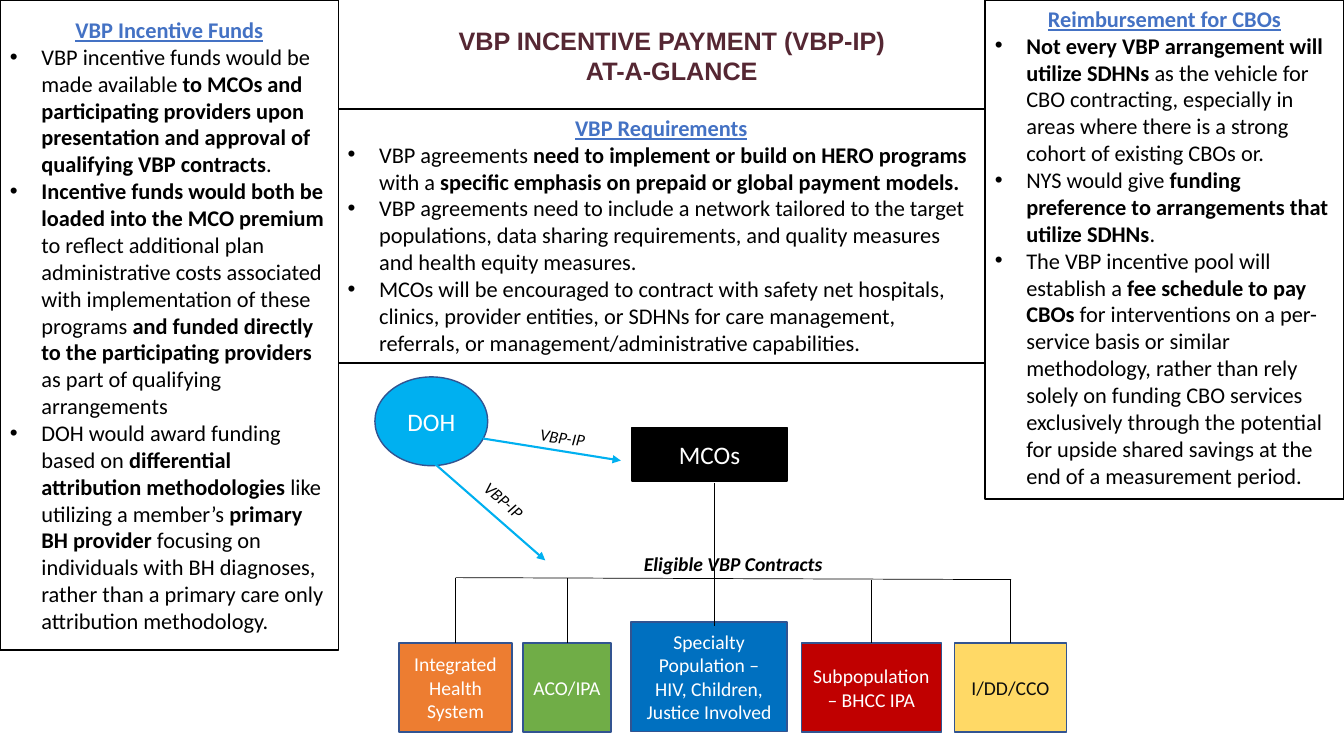
from dataclasses import dataclass
from typing import Optional

from lxml import etree
from pptx import Presentation
from pptx.dml.color import RGBColor
from pptx.enum.shapes import MSO_CONNECTOR, MSO_SHAPE
from pptx.enum.text import MSO_ANCHOR, MSO_AUTO_SIZE, PP_ALIGN
from pptx.oxml.ns import qn
from pptx.util import Pt

RECTANGLE = MSO_SHAPE.RECTANGLE
OVAL = MSO_SHAPE.OVAL
STRAIGHT = MSO_CONNECTOR.STRAIGHT
TOP, MIDDLE = MSO_ANCHOR.TOP, MSO_ANCHOR.MIDDLE
CENTER = PP_ALIGN.CENTER
NO_AUTOFIT = MSO_AUTO_SIZE.NONE
TOP_SIDE = 0


@dataclass(frozen=True)
class Theme:
    title_font: str = "Arial"
    body_font: str = "Calibri"
    title: str = "552733"
    heading: str = "4472C4"
    black: str = "000000"
    white: str = "FFFFFF"
    outline: str = "325491"
    flow: str = "00B0F0"
    large_size: float = 18
    panel_size: float = 16
    box_size: float = 14
    label_size: float = 12
    bullet_indent: float = 22.5


THEME = Theme()


@dataclass(frozen=True)
class Area:
    left: float
    top: float
    width: float
    height: float


@dataclass(frozen=True)
class Panel:
    area: Area
    heading: str
    bullets: tuple[str, ...]
    anchor: MSO_ANCHOR = TOP


@dataclass(frozen=True)
class Node:
    text: str
    area: Area
    fill: str
    size: float = THEME.box_size
    color: str = THEME.white
    outline: str = THEME.outline
    kind: MSO_SHAPE = RECTANGLE
    branch_top: Optional[float] = None


@dataclass(frozen=True)
class Line:
    begin: tuple[float, float]
    end: tuple[float, float]
    color: str = THEME.black
    width: float = 0.5
    arrow: bool = False


@dataclass(frozen=True)
class Label:
    text: str
    area: Area
    size: float = THEME.label_size
    bold: bool = False
    rotation: float = 0


PANELS = (
    Panel(Area(241.2, 77.8, 462.3, 181.4), "VBP Requirements", (
        "VBP agreements *need to implement or build on HERO programs* with a "
        "*specific emphasis on prepaid or global payment models.*",
        "VBP agreements need to include a network tailored to the target populations, "
        "data sharing requirements, and quality measures and health equity measures.",
        "MCOs will be encouraged to contract with safety net hospitals, clinics, provider "
        "entities, or SDHNs for care management, referrals, or management/administrative "
        "capabilities.",
    )),
    Panel(Area(0, 0, 242, 464.4), "VBP Incentive Funds", (
        "VBP incentive funds would be made available *to MCOs and participating providers "
        "upon presentation and approval of qualifying VBP contracts*.",
        "*Incentive funds would both be loaded into the MCO premium *to reflect additional "
        "plan administrative costs associated with implementation of these programs *and "
        "funded directly to the participating providers* as part of qualifying arrangements",
        "DOH would award funding based on *differential attribution methodologies *like "
        "utilizing a member’s *primary BH provider *focusing on individuals with BH "
        "diagnoses, rather than a primary care only attribution methodology.",
    ), MIDDLE),
    Panel(Area(703.5, 0, 256.5, 356.4), "Reimbursement for CBOs", (
        "*Not every VBP arrangement will utilize SDHNs *as the vehicle for CBO contracting, "
        "especially in areas where there is a strong cohort of existing CBOs or.",
        "NYS would give *funding preference to arrangements that utilize SDHNs*.",
        "The VBP incentive pool will establish a *fee schedule to pay CBOs* for interventions "
        "on a per-service basis or similar methodology, rather than rely solely on funding "
        "CBO services exclusively through the potential for upside shared savings at the end "
        "of a measurement period.",
    )),
)

NODES = (
    Node("DOH", Area(267.8, 269.2, 80.6, 63.4), THEME.flow, THEME.large_size, kind=OVAL),
    Node("MCOs", Area(451.4, 305.3, 110.9, 38.2), THEME.black, THEME.large_size,
         outline=THEME.black),
    Node("Integrated Health System", Area(285.1, 459.4, 80.6, 63.4), "ED7D31",
         branch_top=413),
    Node("ACO/IPA", Area(373.7, 459.4, 62.7, 63.4), "70AD47", branch_top=413),
    Node("Specialty Population – HIV, Children, Justice Involved",
         Area(450.7, 444.2, 111.6, 78.5), "0070C0"),
    Node("Subpopulation – BHCC IPA", Area(572.4, 459.4, 100, 63.4), "C00000",
         branch_top=414),
    Node("I/DD/CCO", Area(681.8, 459.4, 80, 63.4), "FFD966", color="0D0D0D",
         branch_top=413.5),
)

LINES = (
    Line((344.9, 313.2), (443.5, 329), THEME.flow, 1.5, True),
    Line((308.9, 329.8), (389.5, 400.3), THEME.flow, 1.5, True),
    Line((325.4, 412.6), (722.2, 414)),
    Line((510.5, 344.9), (510.5, 416.2)),
    Line((510.5, 412.6), (510.5, 447.1)),
)

LABELS = (
    Label("Eligible VBP Contracts", Area(325.4, 391, 396.7, 24.5), THEME.box_size, True),
    Label("VBP-IP", Area(355.7, 301.7, 92.2, 21.6), rotation=8.3),
    Label("VBP-IP", Area(313.9, 346.3, 92.2, 21.6), rotation=41.2),
)


def place(area: Area) -> tuple:
    return Pt(area.left), Pt(area.top), Pt(area.width), Pt(area.height)


def style_font(font, size: float, color: str, bold: bool = False,
               name: str = THEME.body_font) -> None:
    font.name = name
    font.size = Pt(size)
    font.bold = bold
    font.color.rgb = RGBColor.from_string(color)


def add_box(slide, kind: MSO_SHAPE, area: Area, fill: str, outline: str, anchor: MSO_ANCHOR):
    shape = slide.shapes.add_shape(kind, *place(area))
    shape.shadow.inherit = False
    shape.fill.solid()
    shape.fill.fore_color.rgb = RGBColor.from_string(fill)
    shape.line.color.rgb = RGBColor.from_string(outline)
    shape.line.width = Pt(1)
    shape.text_frame.word_wrap = True
    shape.text_frame.vertical_anchor = anchor
    return shape


def add_bullet(text_frame, text: str) -> None:
    paragraph = text_frame.add_paragraph()
    paragraph.alignment = PP_ALIGN.LEFT
    properties = paragraph._p.get_or_add_pPr()
    properties.set("marL", str(Pt(THEME.bullet_indent)))
    properties.set("indent", str(-Pt(THEME.bullet_indent)))
    etree.SubElement(properties, qn("a:buFont")).set("typeface", "Arial")
    etree.SubElement(properties, qn("a:buChar")).set("char", "•")
    for index, segment in enumerate(text.split("*")):
        if segment:
            run = paragraph.add_run()
            run.text = segment
            style_font(run.font, THEME.panel_size, THEME.black, index % 2 == 1)


def add_panel(slide, panel: Panel) -> None:
    shape = add_box(slide, RECTANGLE, panel.area, THEME.white, THEME.black, panel.anchor)
    text_frame = shape.text_frame
    text_frame.text = panel.heading
    heading = text_frame.paragraphs[0]
    heading.alignment = CENTER
    style_font(heading.runs[0].font, THEME.panel_size, THEME.heading, True)
    heading.runs[0].font.underline = True
    for bullet in panel.bullets:
        add_bullet(text_frame, bullet)


def add_line(slide, line: Line):
    connector = slide.shapes.add_connector(
        STRAIGHT, *(Pt(value) for value in line.begin + line.end))
    connector.line.color.rgb = RGBColor.from_string(line.color)
    connector.line.width = Pt(line.width)
    if line.arrow:
        tail = etree.SubElement(connector.line._get_or_add_ln(), qn("a:tailEnd"))
        tail.set("type", "triangle")
    etree.SubElement(connector._element.spPr, qn("a:effectLst"))
    return connector


def add_node(slide, node: Node) -> None:
    shape = add_box(slide, node.kind, node.area, node.fill, node.outline, MIDDLE)
    shape.text_frame.text = node.text
    paragraph = shape.text_frame.paragraphs[0]
    paragraph.alignment = CENTER
    style_font(paragraph.runs[0].font, node.size, node.color)
    if node.branch_top is not None:
        middle = node.area.left + node.area.width / 2
        branch = add_line(slide, Line((middle, node.area.top), (middle, node.branch_top)))
        branch.begin_connect(shape, TOP_SIDE)


def add_label(slide, label: Label) -> None:
    box = slide.shapes.add_textbox(*place(label.area))
    box.rotation = label.rotation
    box.text_frame.word_wrap = True
    box.text_frame.text = label.text
    paragraph = box.text_frame.paragraphs[0]
    paragraph.alignment = CENTER
    style_font(paragraph.runs[0].font, label.size, THEME.black, label.bold)
    paragraph.runs[0].font.italic = True


def add_title(slide, text: str, area: Area) -> None:
    title = slide.shapes.title
    title.left, title.top, title.width, title.height = place(area)
    text_frame = title.text_frame
    text_frame.text = text
    text_frame.word_wrap = True
    text_frame.auto_size = NO_AUTOFIT
    text_frame.vertical_anchor = TOP
    for paragraph in text_frame.paragraphs:
        paragraph.alignment = CENTER
        paragraph.line_spacing = 1.0
        paragraph.space_before = Pt(0)
        style_font(paragraph.runs[0].font, THEME.large_size, THEME.title, True,
                   THEME.title_font)


def main() -> None:
    presentation = Presentation()
    presentation.slide_width, presentation.slide_height = Pt(960), Pt(540)
    slide = presentation.slides.add_slide(presentation.slide_layouts[5])
    add_title(slide, "VBP INCENTIVE PAYMENT (VBP-IP)\nAT-A-GLANCE",
              Area(237.6, 14.4, 484.6, 51.1))
    for panel in PANELS:
        add_panel(slide, panel)
    for node in NODES:
        add_node(slide, node)
    for line in LINES:
        add_line(slide, line)
    for label in LABELS:
        add_label(slide, label)
    presentation.save("out.pptx")


if __name__ == "__main__":
    main()
